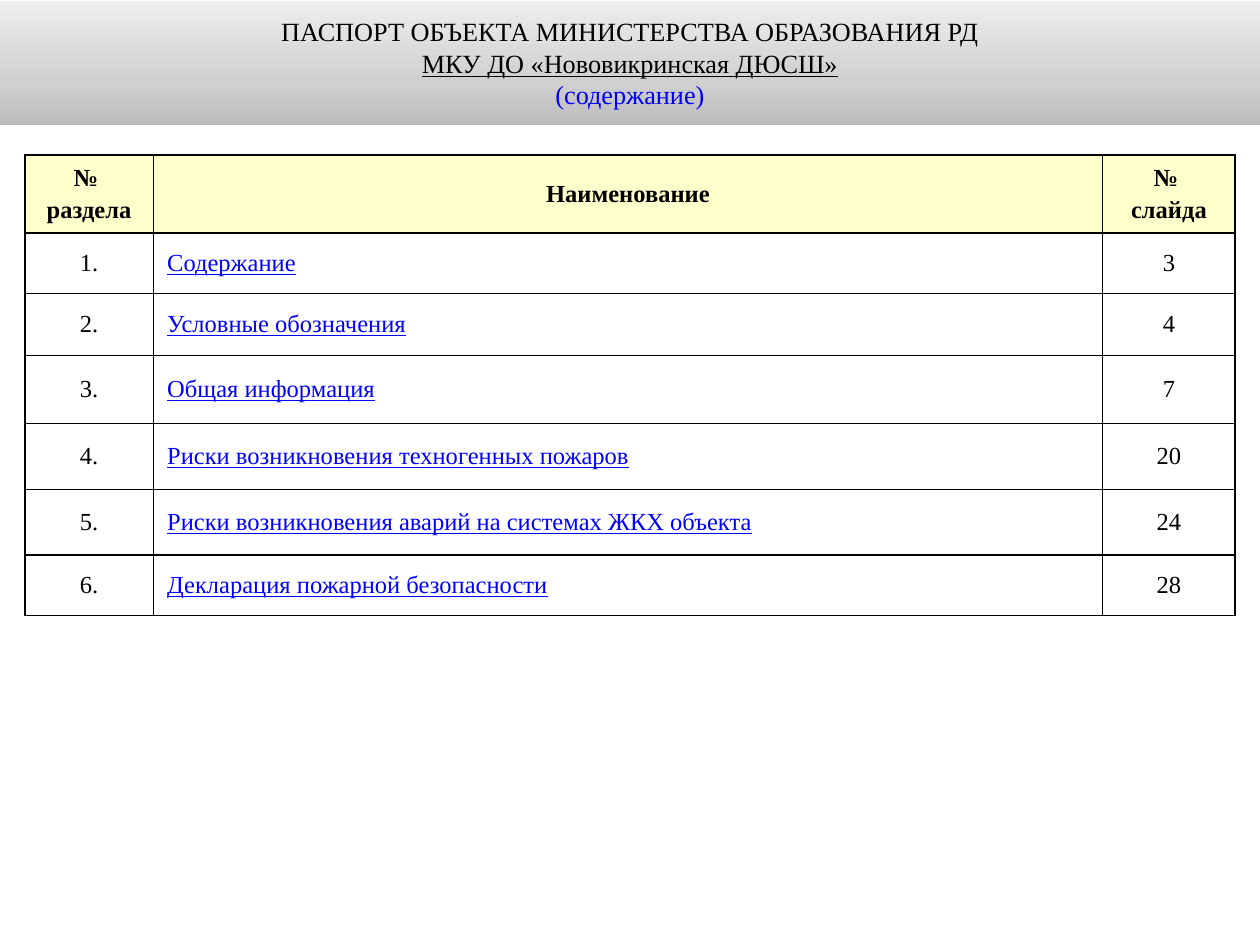
"""Build the contents slide of a facility passport."""
from dataclasses import dataclass

import lxml.etree
import pptx
import pptx.dml.color
import pptx.enum.shapes
import pptx.enum.text
import pptx.oxml.ns
import pptx.util

Cm, Pt = pptx.util.Cm, pptx.util.Pt
qn = pptx.oxml.ns.qn
ALIGN = pptx.enum.text.PP_ALIGN
MIDDLE = pptx.enum.text.MSO_ANCHOR.MIDDLE


@dataclass(frozen=True)
class Theme:
    """Colours, font and sizes of the slide."""
    font: str = "Times New Roman"
    ink: str = "000000"
    link: str = "0000FF"
    heading_fill: str = "FFFFCC"
    row_fill: str = "FFFFFF"
    banner_stops: tuple = ((0, "BCBCBC"), (35, "D0D0D0"), (100, "EDEDED"))
    banner_size: float = 15
    table_size: float = 14
    heading_gap: float = 2.8
    border: float = 1


THEME = Theme()
HEADINGS = (("№ ", "раздела"), ("Наименование",), ("№ ", "слайда"))
SECTIONS = (
    ("Содержание", 3),
    ("Условные обозначения", 4),
    ("Общая информация", 7),
    ("Риски возникновения техногенных пожаров", 20),
    ("Риски возникновения аварий на системах ЖКХ объекта", 24),
    ("Декларация пожарной безопасности", 28),
)
COLUMN_WIDTHS = (2.59, 19.14, 2.67)
ROW_HEIGHTS = (1.58, 1.22, 1.25, 1.37, 1.33, 1.32, 1.22)


def rgb(code):
    """Turn a hex code into a colour."""
    return pptx.dml.color.RGBColor.from_string(code)


def add_line(frame, index, text, size, color=THEME.ink, bold=False,
             underline=False, align=ALIGN.CENTER):
    """Write one paragraph as a single styled run."""
    line = frame.add_paragraph() if index else frame.paragraphs[0]
    line.alignment = align
    run = line.add_run()
    run.text = text
    run.font.name = THEME.font
    run.font.size = Pt(size)
    run.font.bold = bold
    run.font.underline = underline
    run.font.color.rgb = rgb(color)
    return line


def fill_banner(banner):
    """Give the banner a gradient that lightens from bottom to top."""
    banner.fill.gradient()
    banner.fill.gradient_angle = 90
    stops = banner.fill._fill._gradFill.find(qn("a:gsLst"))
    for old in list(stops):
        stops.remove(old)
    for percent, color in THEME.banner_stops:
        stop = lxml.etree.SubElement(stops, qn("a:gs"), pos=str(percent * 1000))
        lxml.etree.SubElement(stop, qn("a:srgbClr"), val=color)


def add_banner(slide):
    """Add the title band across the top."""
    banner = slide.shapes.add_shape(
        pptx.enum.shapes.MSO_SHAPE.RECTANGLE, 0, Cm(0.02), Cm(25.4), Cm(2.5))
    banner.shadow.inherit = False
    banner.line.fill.background()
    fill_banner(banner)
    frame = banner.text_frame
    frame.word_wrap = True
    frame.vertical_anchor = MIDDLE
    size = THEME.banner_size
    add_line(frame, 0, "ПАСПОРТ ОБЪЕКТА МИНИСТЕРСТВА ОБРАЗОВАНИЯ РД", size)
    add_line(frame, 1, "МКУ ДО «Нововикринская ДЮСШ»", size, underline=True)
    add_line(frame, 2, "(содержание)", size, THEME.link)


def style_cell(cell, fill):
    """Set the borders, margins, anchor and fill of a cell."""
    properties = cell._tc.get_or_add_tcPr()
    for side in ("a:lnL", "a:lnR", "a:lnT", "a:lnB"):
        border = lxml.etree.SubElement(
            properties, qn(side), w=str(int(Pt(THEME.border))))
        paint = lxml.etree.SubElement(border, qn("a:solidFill"))
        lxml.etree.SubElement(paint, qn("a:srgbClr"), val=THEME.ink)
    cell.margin_left = cell.margin_right = Cm(0.28)
    cell.margin_top = cell.margin_bottom = Cm(0.13)
    cell.vertical_anchor = MIDDLE
    cell.fill.solid()
    cell.fill.fore_color.rgb = rgb(fill)


def add_contents(slide):
    """Add the table of sections and their slide numbers."""
    contents = slide.shapes.add_table(
        len(ROW_HEIGHTS), len(COLUMN_WIDTHS), Cm(0.5), Cm(3.12),
        Cm(sum(COLUMN_WIDTHS)), Cm(sum(ROW_HEIGHTS))).table
    for column, width in zip(contents.columns, COLUMN_WIDTHS):
        column.width = Cm(width)
    for row, height in zip(contents.rows, ROW_HEIGHTS):
        row.height = Cm(height)

    size = THEME.table_size
    for column, heading in enumerate(HEADINGS):
        cell = contents.cell(0, column)
        style_cell(cell, THEME.heading_fill)
        for index, text in enumerate(heading):
            line = add_line(cell.text_frame, index, text, size, bold=True)
            line.space_before = Pt(THEME.heading_gap if index else 0)

    for number, (title, page) in enumerate(SECTIONS, 1):
        number_cell, title_cell, page_cell = contents.rows[number].cells
        for cell in (number_cell, title_cell, page_cell):
            style_cell(cell, THEME.row_fill)
        add_line(number_cell.text_frame, 0, f"{number}.", size)
        add_line(title_cell.text_frame, 0, title, size, THEME.link,
                 underline=True, align=ALIGN.LEFT)
        add_line(page_cell.text_frame, 0, str(page), size)


def main():
    """Build and save the slide."""
    deck = pptx.Presentation()
    deck.slide_width, deck.slide_height = Cm(25.4), Cm(19.05)
    slide = deck.slides.add_slide(deck.slide_layouts[6])
    add_contents(slide)
    add_banner(slide)
    deck.save("out.pptx")


if __name__ == "__main__":
    main()
